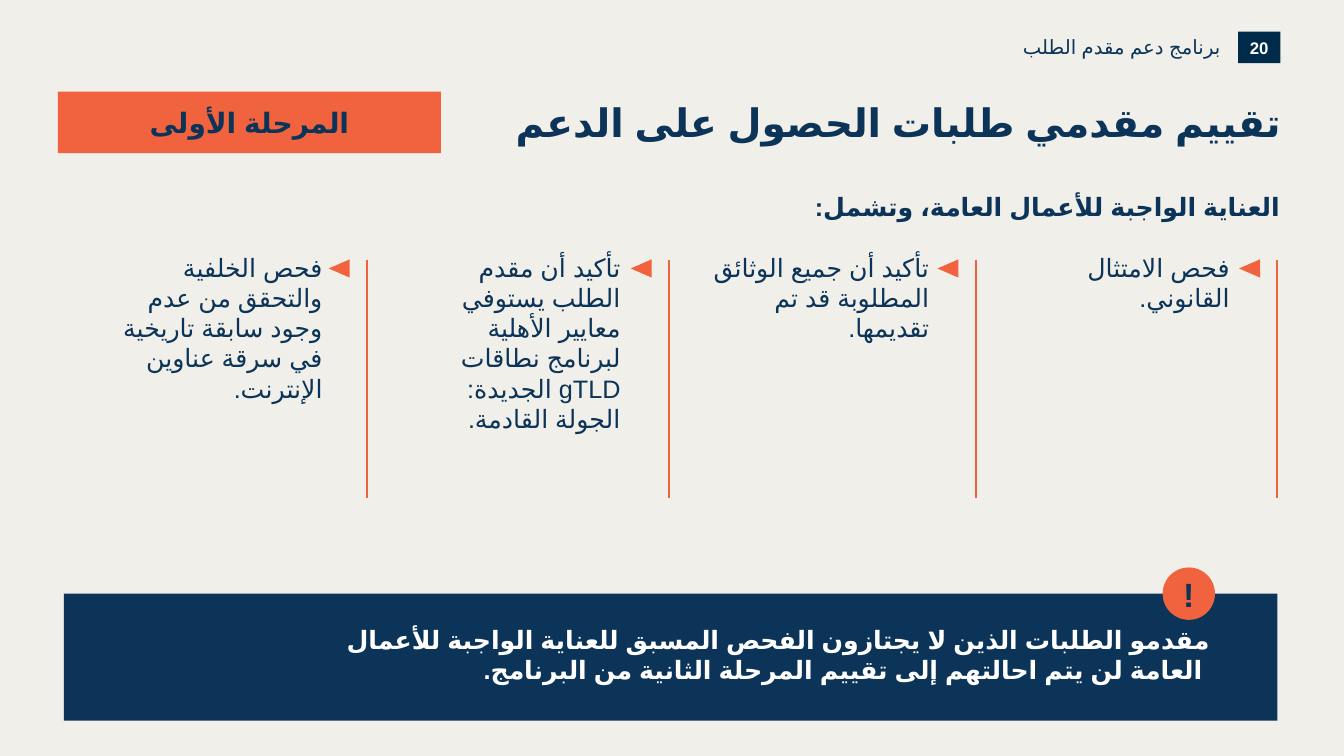
from lxml import etree
from pptx import Presentation
from pptx.dml.color import RGBColor
from pptx.enum.lang import MSO_LANGUAGE_ID
from pptx.enum.shapes import MSO_CONNECTOR, MSO_SHAPE
from pptx.enum.text import MSO_ANCHOR, PP_ALIGN
from pptx.oxml.ns import qn
from pptx.util import Cm, Pt

RECTANGLE, OVAL, TRIANGLE = MSO_SHAPE.RECTANGLE, MSO_SHAPE.OVAL, MSO_SHAPE.ISOSCELES_TRIANGLE
STRAIGHT = MSO_CONNECTOR.STRAIGHT
RIGHT, CENTER = PP_ALIGN.RIGHT, PP_ALIGN.CENTER
TOP, MIDDLE = MSO_ANCHOR.TOP, MSO_ANCHOR.MIDDLE
ARABIC = MSO_LANGUAGE_ID.ARABIC

COLORS = {
    "background": "F1EFEA",
    "navy": "0B3458",
    "dark": "002A49",
    "orange": "F1633E",
    "white": "FFFFFF",
}
FONT = "Arial"

PAGE = "20"
PROGRAM = "برنامج دعم مقدم الطلب"
TITLE = "تقييم مقدمي طلبات الحصول على الدعم"
PHASE = "المرحلة الأولى"
SUBTITLE = "العناية الواجبة للأعمال العامة، وتشمل:"
CHECKS = [
    {"text": "فحص الامتثال القانوني.",
     "rule": 32.19, "left": 25.25, "width": 5.74, "height": 2.62},
    {"text": "تأكيد أن جميع الوثائق المطلوبة قد تم تقديمها.",
     "rule": 24.59, "left": 17.48, "width": 5.94, "height": 4.62},
    {"text": "تأكيد أن مقدم الطلب يستوفي معايير الأهلية لبرنامج نطاقات gTLD الجديدة: الجولة القادمة.",
     "rule": 16.86, "left": 10.31, "width": 5.33, "height": 6.43},
    {"text": "فحص الخلفية والتحقق من عدم وجود سابقة تاريخية في سرقة عناوين الإنترنت.",
     "rule": 9.25, "left": 2.59, "width": 5.54, "height": 3.96},
]
WARNING = [
    "مقدمو الطلبات الذين لا يجتازون الفحص المسبق للعناية الواجبة للأعمال",
    " العامة لن يتم احالتهم إلى تقييم المرحلة الثانية من البرنامج.",
]
WARNING_MARK = "!"

CHECKS_TOP = 6.35
RULE_TOP, RULE_BOTTOM = 6.55, 12.55
ARROW_TOP, ARROW_OFFSET = 6.5, 0.93

prs = Presentation()
prs.slide_width, prs.slide_height = Cm(33.87), Cm(19.05)
slide = prs.slides.add_slide(prs.slide_layouts[6])
slide.background.fill.solid()
slide.background.fill.fore_color.rgb = RGBColor.from_string(COLORS["background"])


def add_block(kind, left, top, width, height, color):
    block = slide.shapes.add_shape(kind, Cm(left), Cm(top), Cm(width), Cm(height))
    block.shadow.inherit = False
    block.fill.solid()
    block.fill.fore_color.rgb = RGBColor.from_string(COLORS[color])
    block.line.fill.background()
    return block


def add_box(left, top, width, height):
    return slide.shapes.add_textbox(Cm(left), Cm(top), Cm(width), Cm(height))


def write(holder, *lines, size=18, bold=False, color="navy", align=RIGHT,
          anchor=TOP, insets=(0, 0, 0, 0), rtl=True):
    frame = holder.text_frame
    frame.word_wrap = True
    frame.vertical_anchor = anchor
    frame.margin_left, frame.margin_top, frame.margin_right, frame.margin_bottom = map(Cm, insets)
    for index, line in enumerate(lines):
        paragraph = frame.add_paragraph() if index else frame.paragraphs[0]
        paragraph.alignment = align
        run = paragraph.add_run()
        run.text = line
        run.font.size = Pt(size)
        run.font.bold = bold
        run.font.color.rgb = RGBColor.from_string(COLORS[color])
        run.font.name = FONT
        etree.SubElement(run.font._element, qn("a:cs")).set("typeface", FONT)
        if rtl:
            paragraph._p.get_or_add_pPr().set("rtl", "1")
            run.font.language_id = ARABIC


write(add_block(RECTANGLE, 31.2, 0.8, 1.07, 0.79, "dark"), PAGE,
      size=12, bold=True, color="white", align=CENTER, anchor=MIDDLE, rtl=False)
write(add_box(18.49, 0.89, 12.27, 0.61), PROGRAM, size=14)
write(add_box(12.37, 2.49, 19.91, 1.4), TITLE, size=28, bold=True)
write(add_block(RECTANGLE, 1.46, 2.31, 9.65, 1.55, "orange"), PHASE,
      size=20, bold=True, align=CENTER, anchor=MIDDLE)
write(add_box(1.6, 4.83, 30.66, 1.04), SUBTITLE, bold=True)

for check in CHECKS:
    write(add_box(check["left"], CHECKS_TOP, check["width"], check["height"]), check["text"])
    rule = slide.shapes.add_connector(
        STRAIGHT, Cm(check["rule"]), Cm(RULE_TOP), Cm(check["rule"]), Cm(RULE_BOTTOM))
    rule.line.color.rgb = RGBColor.from_string(COLORS["orange"])
    rule.line.width = Pt(1.25)
    etree.SubElement(rule._element.spPr, qn("a:effectLst"))
    arrow = add_block(TRIANGLE, check["rule"] - ARROW_OFFSET, ARROW_TOP, 0.46, 0.53, "orange")
    arrow.rotation = 270

write(add_block(RECTANGLE, 1.61, 14.96, 30.58, 3.2, "navy"), *WARNING,
      bold=True, color="white", insets=(1.19, 0.76, 1.7, 0.76))
write(add_block(OVAL, 29.3, 14.3, 1.32, 1.32, "orange"), WARNING_MARK,
      size=24, bold=True, align=CENTER, anchor=MIDDLE, insets=(0.25, 0.13, 0.25, 0.13))

prs.save("out.pptx")
